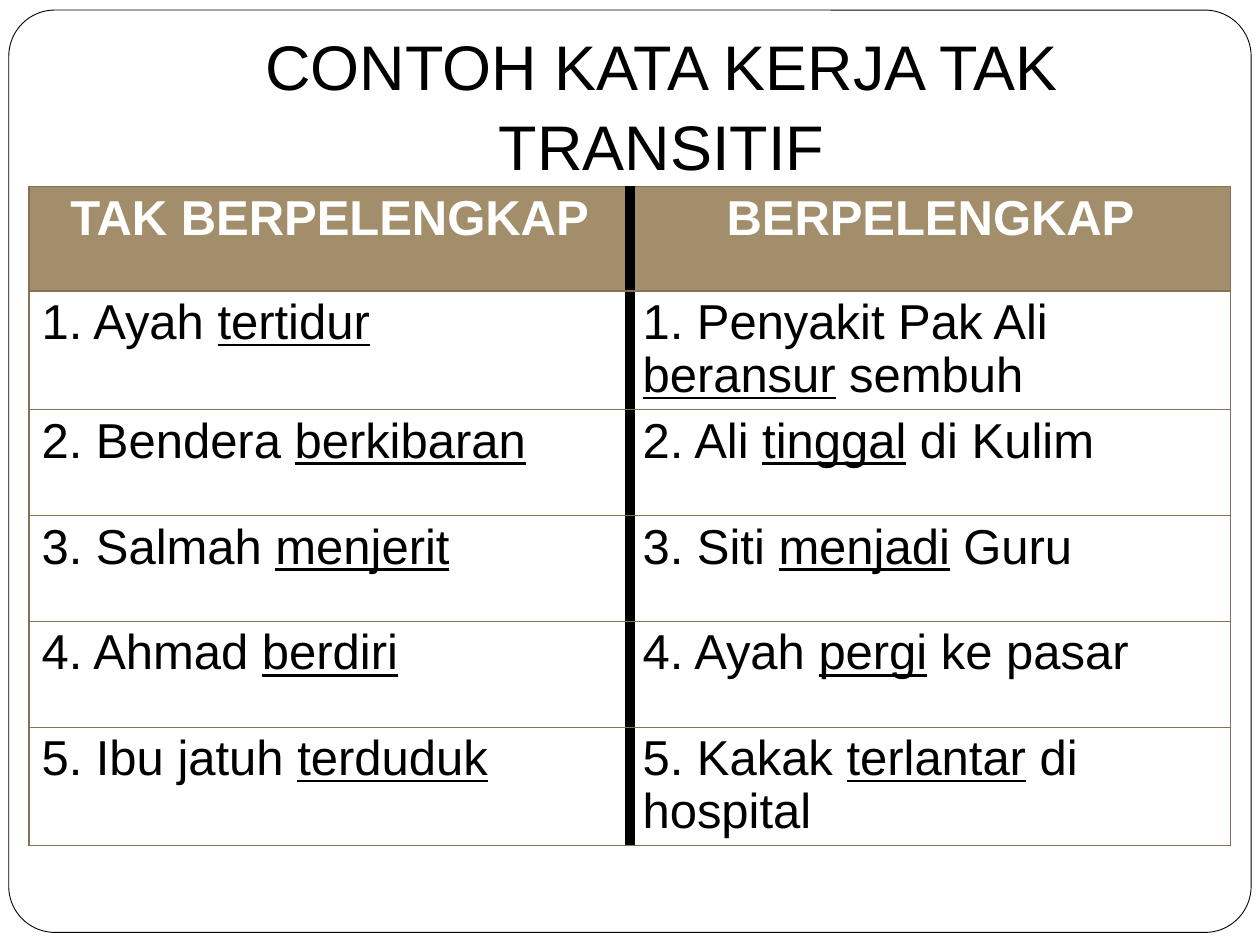
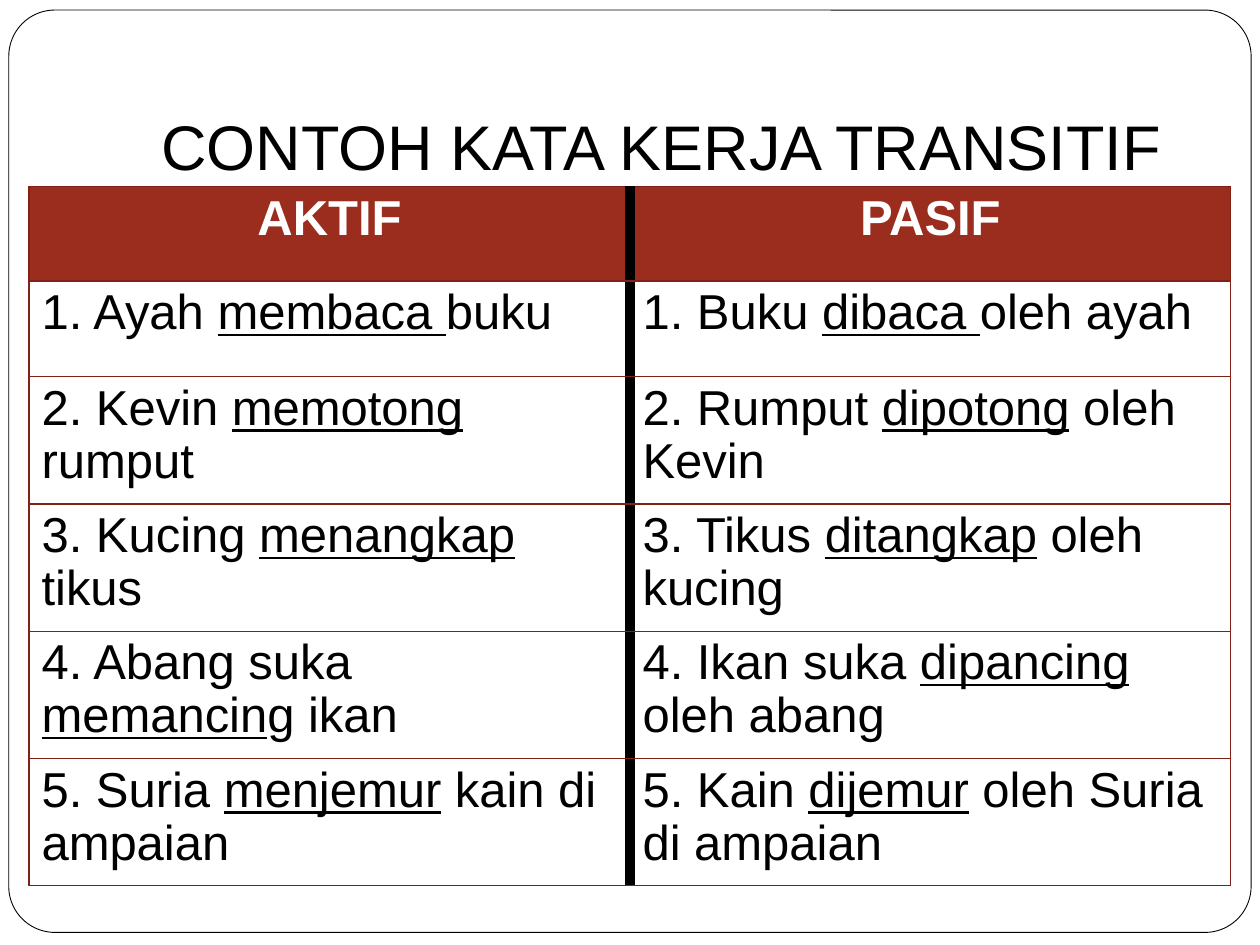
from lxml.etree import SubElement
from pptx import Presentation
from pptx.dml.color import RGBColor
from pptx.enum.shapes import MSO_SHAPE
from pptx.enum.text import MSO_ANCHOR, MSO_AUTO_SIZE, PP_ALIGN
from pptx.oxml.ns import qn
from pptx.util import Inches, Pt

BLACK, WHITE = "000000", "FFFFFF"
RULE, DIVIDER = 0.75, 6


def color(value):
    """Turn a hex string into a colour."""
    return RGBColor.from_string(value)


def write_text(frame, text, size=28, fill=BLACK, bold=False,
               align=PP_ALIGN.LEFT, spacing=1.0):
    """Write text in one paragraph, underlining the parts between underscores."""
    paragraph = frame.paragraphs[0]
    paragraph.alignment = align
    paragraph.line_spacing = spacing
    for index, part in enumerate(text.split("_")):
        if part:
            run = paragraph.add_run()
            run.text = part
            font = run.font
            font.name, font.size, font.bold = "Arial", Pt(size), bold
            font.underline = index % 2 == 1
            font.color.rgb = color(fill)


def set_border(cell, side, value, width):
    """Draw one border (lnL, lnR, lnT or lnB) of a cell."""
    properties = cell._tc.get_or_add_tcPr()
    line = SubElement(properties, qn(f"a:{side}"), w=str(Pt(width)))
    fill = SubElement(line, qn("a:solidFill"))
    SubElement(fill, qn("a:srgbClr"), val=value)


class Deck:
    """Hold the shared style and the current slide."""

    def __init__(self):
        """Start an empty presentation."""
        self.presentation = Presentation()
        self.presentation.slide_width = Inches(10)
        self.presentation.slide_height = Inches(7.5)
        self.slide = None

    def add_slide(self, title):
        """Add a slide with the rounded frame and a title."""
        layout = self.presentation.slide_layouts.get_by_name("Title Only")
        self.slide = self.presentation.slides.add_slide(layout)
        self.add_frame()
        self.add_title(title)

    def add_frame(self):
        """Place the rounded frame behind everything else."""
        shapes = self.slide.shapes
        frame = shapes.add_shape(MSO_SHAPE.ROUNDED_RECTANGLE, Inches(0.07),
                                 Inches(0.08), Inches(9.86), Inches(7.32))
        frame.adjustments[0] = 0.05
        frame.shadow.inherit = False
        frame.fill.solid()
        frame.fill.fore_color.rgb = color(WHITE)
        frame.line.color.rgb = color(BLACK)
        frame.line.width = Pt(0.5)
        shapes._spTree.insert(2, frame._element)

    def add_title(self, text):
        """Move and fill the title placeholder."""
        title = self.slide.shapes.title
        title.left, title.top = Inches(1), Inches(0.3)
        title.width, title.height = Inches(8.5), Inches(1.25)
        frame = title.text_frame
        frame.auto_size = MSO_AUTO_SIZE.NONE
        frame.vertical_anchor = MSO_ANCHOR.BOTTOM
        frame.margin_left = frame.margin_right = frame.margin_bottom = Inches(0.1)
        frame.margin_top = Inches(0.05)
        write_text(frame, text, size=36, align=PP_ALIGN.CENTER, spacing=1.05)

    def add_comparison(self, rows, heights, header_fill, rule_color):
        """Add a two-column table split by a thick divider."""
        shape = self.slide.shapes.add_table(
            len(rows), 2, Inches(0.23), Inches(1.48),
            Inches(9.54), Inches(sum(heights)))
        table = shape.table
        for column in table.columns:
            column.width = Inches(4.77)
        rule, divider = (rule_color, RULE), (BLACK, DIVIDER)
        for row_index, (texts, height) in enumerate(zip(rows, heights)):
            table.rows[row_index].height = Inches(height)
            header = row_index == 0
            for column_index, text in enumerate(texts):
                cell = table.cell(row_index, column_index)
                write_text(cell.text_frame, text, bold=header, spacing=0.97,
                           fill=WHITE if header else BLACK,
                           align=PP_ALIGN.CENTER if header else PP_ALIGN.LEFT)
                sides = (rule, divider) if column_index == 0 else (divider, rule)
                for side, style in zip(("lnL", "lnR", "lnT", "lnB"),
                                       (*sides, rule, rule)):
                    set_border(cell, side, *style)
                cell.fill.solid()
                cell.fill.fore_color.rgb = color(header_fill if header else WHITE)


INTRANSITIVE = [
    ("TAK BERPELENGKAP", "BERPELENGKAP"),
    ("1. Ayah _tertidur_", "1. Penyakit Pak Ali _beransur_ sembuh"),
    ("2. Bendera _berkibaran_", "2. Ali _tinggal_ di Kulim"),
    ("3. Salmah _menjerit_", "3. Siti _menjadi_ Guru"),
    ("4. Ahmad _berdiri_", "4. Ayah _pergi_ ke pasar"),
    ("5. Ibu jatuh _terduduk_", "5. Kakak _terlantar_ di hospital"),
]
TRANSITIVE = [
    ("AKTIF", "PASIF"),
    ("1. Ayah _membaca _buku", "1. Buku _dibaca _oleh ayah"),
    ("2. Kevin _memotong_ rumput", "2. Rumput _dipotong_ oleh Kevin"),
    ("3. Kucing _menangkap _tikus", "3. Tikus _ditangkap_ oleh kucing"),
    ("4. Abang suka _memancin_g ikan", "4. Ikan suka _dipancing_ oleh abang"),
    ("5. Suria _menjemur_ kain di ampaian",
     "5. Kain _dijemur_ oleh Suria di ampaian"),
]


def main():
    """Build both slides and save them."""
    deck = Deck()
    deck.add_slide("CONTOH KATA KERJA TAK TRANSITIF")
    deck.add_comparison(INTRANSITIVE, [0.83] + [0.84] * 5, "A28E6A", "847253")
    deck.add_slide("CONTOH KATA KERJA TRANSITIF")
    deck.add_comparison(TRANSITIVE, [0.75, 0.76] + [1.01] * 4, "9B2D1F", "812014")
    deck.presentation.save("out.pptx")


if __name__ == "__main__":
    main()
